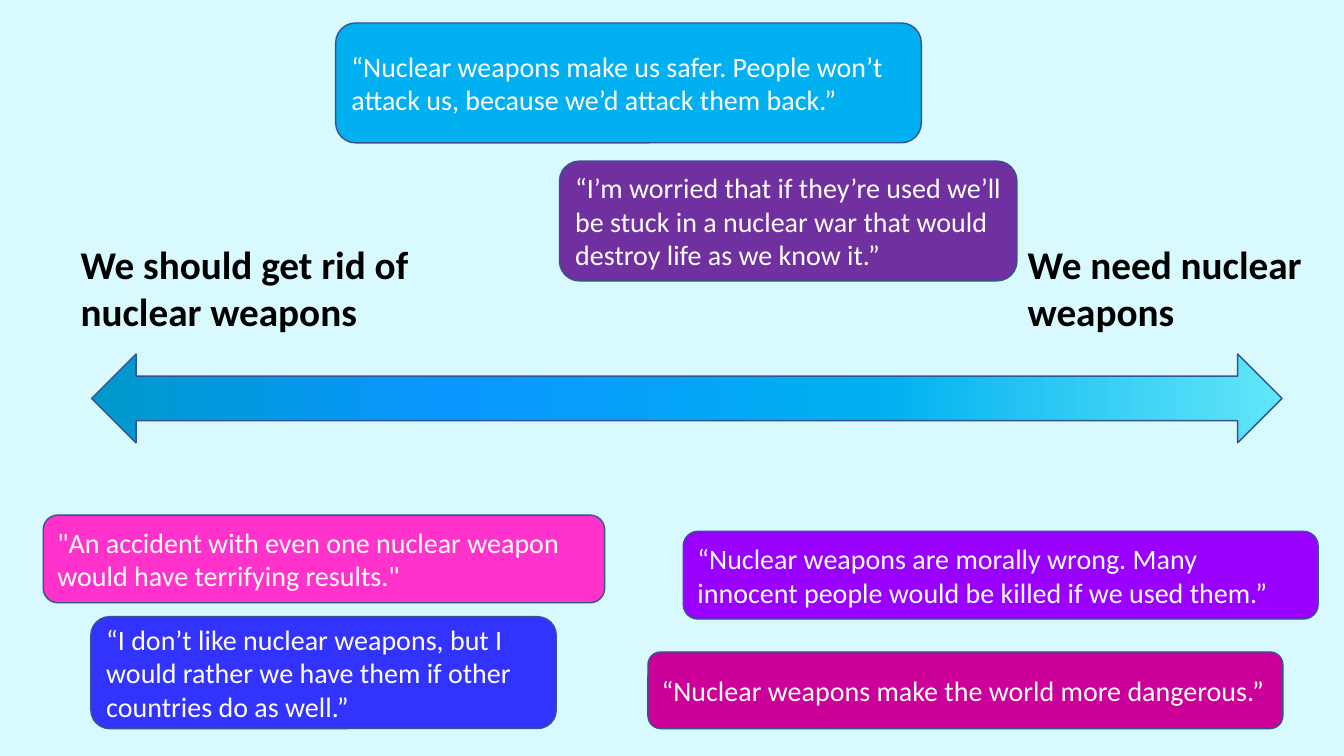
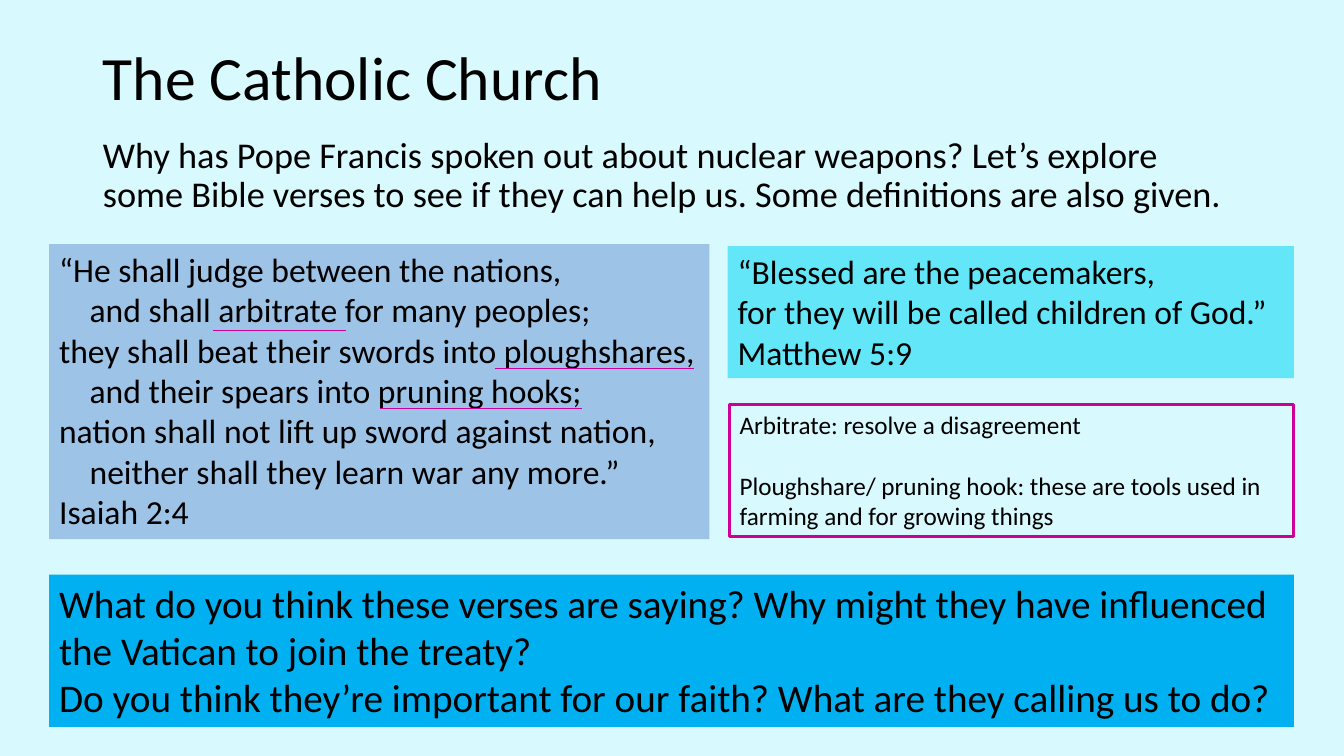
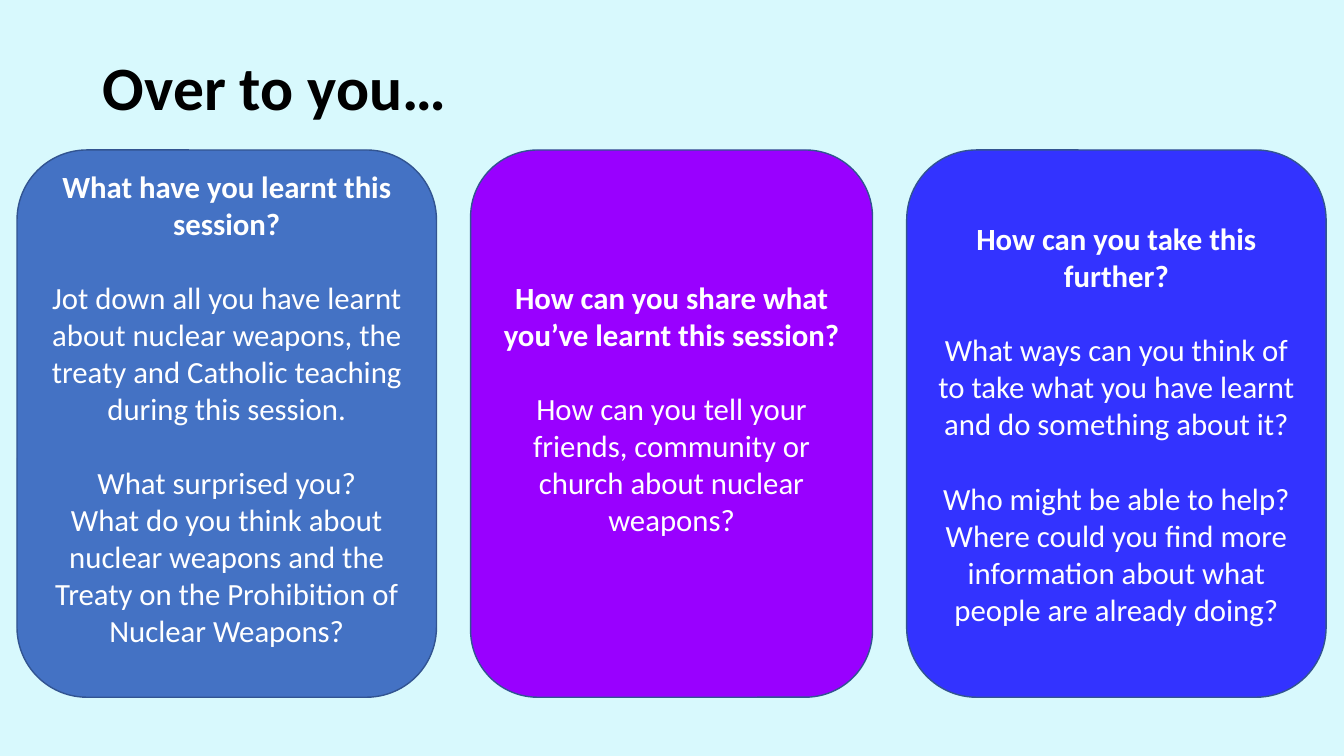
from lxml import etree
from pptx import Presentation
from pptx.dml import color as dml
from pptx.enum import shapes, text
from pptx.oxml import ns
from pptx.util import Cm, Pt

FONT = "Calibri"
BACKGROUND = "D8F9FD"
BLACK, WHITE = "000000", "FFFFFF"
OUTLINE = "325491"
SKY, AQUA, MAGENTA = "00B0F0", "62E6F8", "CC0099"
VIOLET, BLUE = "9900FF", "3333FF"
LINE_HEIGHT = 1.22
TEXT_LEFT, TEXT_WIDTH = 2.34, 29.21
VERSE_INDENT = 0.77


def rgb(value):
    return dml.RGBColor.from_string(value)


def lengths(box):
    return [Cm(value) for value in box]


def write(frame, sections, size, color=BLACK, bold=False, align=text.PP_ALIGN.LEFT):
    frame.word_wrap = True
    first = True
    for section in sections:
        for row, words in enumerate(section):
            paragraph = frame.paragraphs[0] if first else frame.add_paragraph()
            paragraph.text = words
            paragraph.alignment = align
            paragraph.font.name = FONT
            paragraph.font.size = Pt(size)
            paragraph.font.bold = bold
            paragraph.font.color.rgb = rgb(color)
            if row == 0 and not first:
                paragraph.space_before = Pt(round(size * LINE_HEIGHT, 1))
            first = False


def add_title(slide, words, top, bold=False):
    title = slide.shapes.title
    title.left, title.top, title.width, title.height = lengths(
        (TEXT_LEFT, top, TEXT_WIDTH, 3.68))
    write(title.text_frame, [[words]], 44, bold=bold)
    title.text_frame.vertical_anchor = text.MSO_ANCHOR.MIDDLE
    title.text_frame.auto_size = text.MSO_AUTO_SIZE.NONE
    title.text_frame.paragraphs[0].line_spacing = 0.9


def add_intro(slide, words, box):
    intro = slide.placeholders[1]
    intro.left, intro.top, intro.width, intro.height = lengths(box)
    write(intro.text_frame, [[words]], 25.9)
    intro.text_frame.auto_size = text.MSO_AUTO_SIZE.NONE
    paragraph = intro.text_frame.paragraphs[0]
    paragraph.line_spacing = 0.9
    paragraph.space_before = Pt(10)
    properties = paragraph._p.get_or_add_pPr()
    properties.set("marL", "0")
    properties.set("indent", "0")
    etree.SubElement(properties, ns.qn("a:buNone"))


def add_outlined(slide, kind, box):
    shape = slide.shapes.add_shape(kind, *lengths(box))
    shape.shadow.inherit = False
    shape.line.color.rgb = rgb(OUTLINE)
    shape.line.width = Pt(1)
    return shape


def add_bubble(slide, box, fill, sections, size, align=text.PP_ALIGN.LEFT):
    bubble = add_outlined(slide, shapes.MSO_SHAPE.ROUNDED_RECTANGLE, box)
    bubble.fill.solid()
    bubble.fill.fore_color.rgb = rgb(fill)
    bubble.text_frame.vertical_anchor = text.MSO_ANCHOR.MIDDLE
    write(bubble.text_frame, sections, size, WHITE, align=align)
    return bubble


def add_panel(slide, box, sections, size, fill=None, border=None, bold=False):
    panel = slide.shapes.add_textbox(*lengths(box))
    if fill:
        panel.fill.solid()
        panel.fill.fore_color.rgb = rgb(fill)
    if border:
        panel.line.color.rgb = rgb(border)
        panel.line.width = Pt(2.25)
    write(panel.text_frame, sections, size, bold=bold)
    return panel


def add_opinion_scale(slide, box):
    scale = add_outlined(slide, shapes.MSO_SHAPE.LEFT_RIGHT_ARROW, box)
    scale.fill.gradient()
    scale.fill.gradient_angle = 0
    stops = scale._element.spPr.find(".//" + ns.qn("a:gsLst"))
    for stop in list(stops):
        stops.remove(stop)
    for percent, color in ((0, "0099CC"), (30, "0996FF"), (66, SKY), (100, AQUA)):
        stop = etree.SubElement(stops, ns.qn("a:gs"), pos=str(percent * 1000))
        etree.SubElement(stop, ns.qn("a:srgbClr"), val=color)
    left, top, width, _ = box
    for label, shift, label_width in (
        ("We should get rid of nuclear weapons", -0.53, 9.88),
        ("We need nuclear weapons", width - 6.66, 7.54),
    ):
        add_panel(slide, (left + shift, top - 3, label_width, 2.64),
                  [[label]], 28, bold=True)


def add_isaiah(slide, box):
    verses = [
        "“He shall judge between the nations,",
        "and shall arbitrate for many peoples;",
        "they shall beat their swords into ploughshares,",
        "and their spears into pruning hooks;",
        "nation shall not lift up sword against nation,",
        "neither shall they learn war any more.”",
        "Isaiah 2:4",
    ]
    panel = add_panel(slide, box, [verses], 24, "9DC3E6")
    for paragraph in panel.text_frame.paragraphs[1::2]:
        paragraph._p.get_or_add_pPr().set("marL", str(Cm(VERSE_INDENT)))
    left, top = box[:2]
    for start, end, drop in ((4.14, 7.47, 2.18), (11.23, 16.26, 3.12), (8.34, 13.42, 4.14)):
        underline = slide.shapes.add_connector(
            shapes.MSO_CONNECTOR.STRAIGHT,
            *lengths((left + start, top + drop, left + end, top + drop)))
        underline.line.color.rgb = rgb(MAGENTA)
        underline.line.width = Pt(0.5)
        etree.SubElement(underline._element.spPr, ns.qn("a:effectLst"))


def add_task(slide, box, fill, sections, spare_bottom):
    task = add_bubble(slide, box, fill, sections, 22, text.PP_ALIGN.CENTER)
    task.text_frame.paragraphs[0].font.bold = True
    task.text_frame.margin_bottom = Cm(0.13 + spare_bottom)


def build_opinions(slide):
    add_opinion_scale(slide, (2.31, 8.92, 30, 2.24))
    for box, fill, quote in (
        ((8.46, 0.58, 14.76, 3.02), SKY,
         "“Nuclear weapons make us safer. People won’t attack us, because we’d attack them back.”"),
        ((2.29, 15.54, 11.73, 2.82), BLUE,
         "“I don’t like nuclear weapons, but I would rather we have them if other countries do as well.”"),
        ((16.33, 16.43, 16, 1.93), MAGENTA,
         "“Nuclear weapons make the world more dangerous.”"),
        ((17.22, 13.39, 16, 2.21), VIOLET,
         "“Nuclear weapons are morally wrong. Many innocent people would be killed if we used them.”"),
        ((14.1, 4.06, 11.53, 3.02), "7030A0",
         "“I’m worried that if they’re used we’ll be stuck in a nuclear war that would destroy life as we know it.”"),
        ((1.09, 12.98, 14.15, 2.21), "FF33CC",
         "\"An accident with even one nuclear weapon would have terrifying results.\""),
    ):
        add_bubble(slide, box, fill, [[quote]], 20)


def build_verses(slide):
    add_title(slide, "The Catholic Church", 0.18)
    add_intro(slide,
              "Why has Pope Francis spoken out about nuclear weapons? Let’s explore some Bible "
              "verses to see if they can help us. Some definitions are also given.",
              (TEXT_LEFT, 3.33, TEXT_WIDTH, 2.64))
    add_isaiah(slide, (1.24, 6.15, 16.64, 7.44))
    add_panel(slide, (18.34, 6.2, 14.27, 3.33), [[
        "“Blessed are the peacemakers,",
        "for they will be called children of God.”",
        "Matthew 5:9",
    ]], 24, AQUA)
    add_panel(slide, (18.39, 10.19, 14.22, 3.33), [
        ["Arbitrate: resolve a disagreement"],
        ["Ploughshare/ pruning hook: these are tools used in farming and for growing things"],
    ], 18, border=MAGENTA)
    add_panel(slide, (1.24, 14.48, 31.37, 3.84), [[
        "What do you think these verses are saying? Why might they have influenced the Vatican to join the treaty?",
        "Do you think they’re important for our faith? What are they calling us to do?",
    ]], 28, SKY)


def build_tasks(slide):
    add_title(slide, "Over to you…", 0.43, bold=True)
    left, gap = 0.43, 0.86
    for width, fill, spare_bottom, sections in (
        (10.57, "4472C4", 0.77, [
            ["What have you learnt this session?"],
            ["Jot down all you have learnt about nuclear weapons, the treaty and Catholic teaching during this session."],
            ["What surprised you?",
             "What do you think about nuclear weapons and the Treaty on the Prohibition of Nuclear Weapons?"],
        ]),
        (10.13, VIOLET, 0.77, [
            ["How can you share what you’ve learnt this session?"],
            ["How can you tell your friends, community or church about nuclear weapons?"],
        ]),
        (10.57, BLUE, 0, [
            ["How can you take this further?"],
            ["What ways can you think of to take what you have learnt and do something about it?"],
            ["Who might be able to help? Where could you find more information about what people are already doing?"],
        ]),
    ):
        add_task(slide, (left, 3.78, width, 13.79), fill, sections, spare_bottom)
        left += width + gap


def main():
    deck = Presentation()
    deck.slide_width, deck.slide_height = Cm(33.87), Cm(19.05)
    backdrop = deck.slide_master.background.fill
    backdrop.solid()
    backdrop.fore_color.rgb = rgb(BACKGROUND)
    for layout, build in ((6, build_opinions), (1, build_verses), (5, build_tasks)):
        build(deck.slides.add_slide(deck.slide_layouts[layout]))
    deck.save("out.pptx")


if __name__ == "__main__":
    main()
